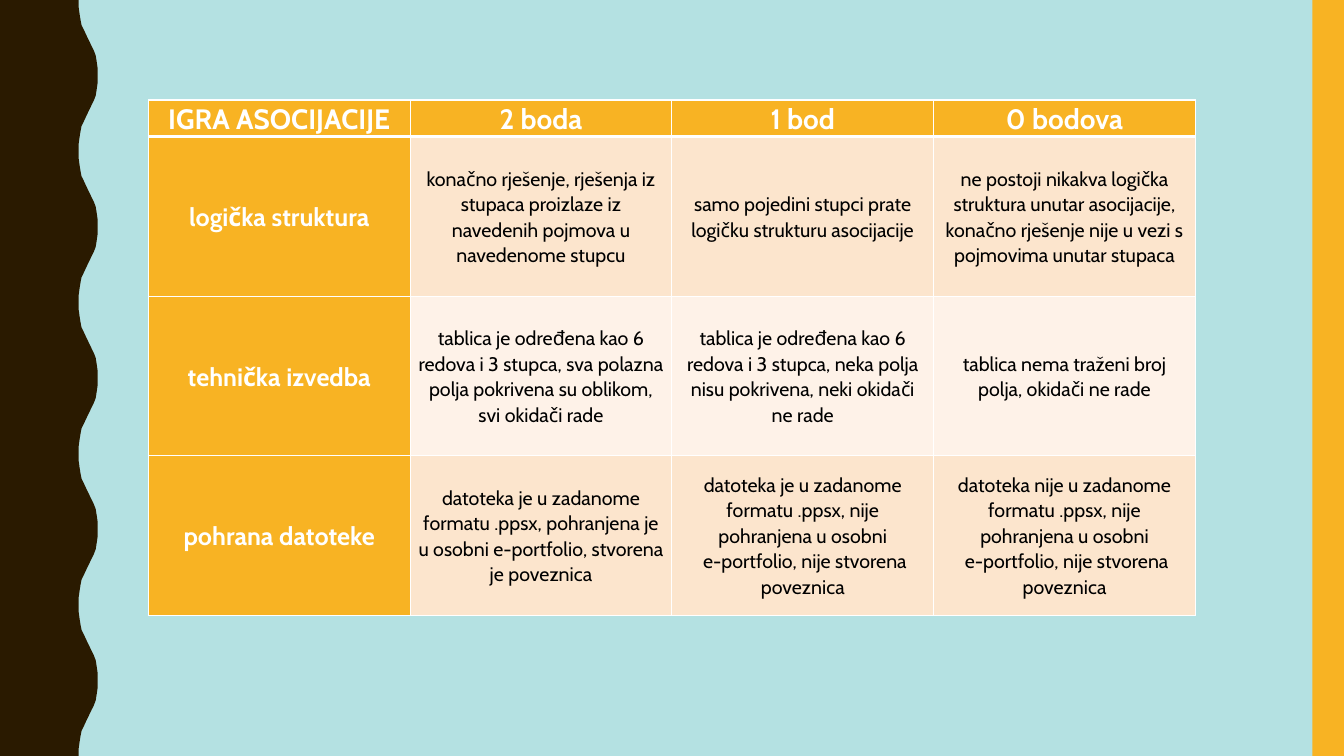
from lxml.etree import SubElement
from pptx import Presentation
from pptx.dml.color import RGBColor
from pptx.enum.shapes import MSO_SHAPE as Shape
from pptx.enum.text import MSO_ANCHOR as Anchor, PP_ALIGN as Align
from pptx.oxml import parse_xml
from pptx.oxml.ns import nsdecls, qn
from pptx.util import Pt

WIDTH, HEIGHT = 960, 540
AQUA, BROWN, GOLD = "B4E1E2", "2A1A00", "F8B323"
PEACH, CREAM, WHITE, BLACK = "FCE5CD", "FEF2E8", "FFFFFF", "000000"

# Half a wave, from trough to crest, in points
WAVE_PERIOD = 108
HALF_WAVE = [
    (56.2, 0), (56.2, 5), (56.9, 10), (57.6, 14.4), (58.3, 18),
    (59.8, 21), (61.2, 24), (62.6, 27), (64.1, 30), (65.5, 33),
    (67, 36), (68.4, 39.6), (69.1, 44), (69.8, 49), (69.8, 54),
]

HEADINGS = ["IGRA ASOCIJACIJE", "2 boda", "1 bod", "0 bodova"]
CRITERIA = [
    ["logička struktura",
     "konačno rješenje, rješenja iz stupaca proizlaze iz navedenih pojmova u navedenome stupcu",
     "samo pojedini stupci prate logičku strukturu asocijacije",
     "ne postoji nikakva logička struktura unutar asocijacije, "
     "konačno rješenje nije u vezi s pojmovima unutar stupaca"],
    ["tehnička izvedba",
     "tablica je određena kao 6 redova i 3 stupca, sva polazna polja pokrivena su oblikom, "
     "svi okidači rade",
     "tablica je određena kao 6 redova i 3 stupca, neka polja nisu pokrivena, "
     "neki okidači ne rade",
     "tablica nema traženi broj polja, okidači ne rade"],
    ["pohrana datoteke",
     "datoteka je u zadanome formatu .ppsx, pohranjena je u osobni e-portfolio, "
     "stvorena je poveznica",
     "datoteka je u zadanome formatu .ppsx, nije pohranjena u osobni\n"
     " e-portfolio, nije stvorena poveznica",
     "datoteka nije u zadanome formatu .ppsx, nije pohranjena u osobni\n"
     " e-portfolio, nije stvorena poveznica"],
]


def paint(fill, color):
    fill.solid()
    fill.fore_color.rgb = RGBColor.from_string(color)


def finish(shape, color):
    paint(shape.fill, color)
    shape.line.fill.background()
    shape.shadow.inherit = False


def write(frame, text, size=14, color=BLACK, bold=False):
    frame.text = text
    for paragraph in frame.paragraphs:
        paragraph.alignment = Align.CENTER
        paragraph.line_spacing = 1.07
        font = paragraph.font
        for run in paragraph.runs:
            font = run.font
            font.name, font.size, font.bold = "Cabin", Pt(size), bold
            font.color.rgb = RGBColor.from_string(color)


def set_borders(cell, top=1, bottom=1):
    properties = cell._tc.get_or_add_tcPr()
    widths = {"lnL": 1, "lnR": 1, "lnT": top, "lnB": bottom}
    for position, (side, width) in enumerate(widths.items()):
        border = parse_xml(f'<a:{side} {nsdecls("a")} w="{Pt(width)}"/>')
        fill = SubElement(border, qn("a:solidFill"))
        SubElement(fill, qn("a:srgbClr"), val=WHITE)
        properties.insert(position, border)


def fill_cell(cell, text, fill, top=1, bottom=1, **text_format):
    cell.vertical_anchor = Anchor.MIDDLE
    cell.margin_left = cell.margin_right = Pt(5)
    cell.margin_top = cell.margin_bottom = 0
    paint(cell.fill, fill)
    set_borders(cell, top, bottom)
    write(cell.text_frame, text, **text_format)


def add_wavy_edge(slide):
    wave = HALF_WAVE + [(x, WAVE_PERIOD - y) for x, y in HALF_WAVE[-2::-1]]
    edge = [(Pt(x), Pt(y + start))
            for start in range(0, HEIGHT, WAVE_PERIOD) for x, y in wave]
    builder = slide.shapes.build_freeform(0, 0)
    builder.add_line_segments(edge + [(0, Pt(HEIGHT))], close=True)
    finish(builder.convert_to_shape(), BROWN)


def add_side_bar(slide, left):
    bar = slide.shapes.add_shape(
        Shape.RECTANGLE, Pt(left), 0, Pt(WIDTH - left), Pt(HEIGHT))
    finish(bar, GOLD)


def add_rubric(slide, left, top, column_width, header_height, row_height):
    rows, columns = len(CRITERIA) + 1, len(HEADINGS)
    rubric = slide.shapes.add_table(
        rows, columns, Pt(left), Pt(top), Pt(column_width * columns),
        Pt(header_height + row_height * len(CRITERIA))).table
    for column in rubric.columns:
        column.width = Pt(column_width)
    for index, row in enumerate(rubric.rows):
        row.height = Pt(row_height if index else header_height)

    # Header row
    for index, heading in enumerate(HEADINGS):
        fill_cell(rubric.cell(0, index), heading, GOLD, bottom=3,
                  size=20, color=WHITE, bold=True)

    # Criterion names and their descriptions, in banded rows
    for index, (criterion, *descriptions) in enumerate(CRITERIA, 1):
        top_border = 3 if index == 1 else 1
        fill_cell(rubric.cell(index, 0), criterion, GOLD, top=top_border,
                  size=18, color=WHITE, bold=True)
        band = PEACH if index % 2 else CREAM
        for column, description in enumerate(descriptions, 1):
            fill_cell(rubric.cell(index, column), description, band, top=top_border)


def main():
    deck = Presentation()
    deck.slide_width, deck.slide_height = Pt(WIDTH), Pt(HEIGHT)
    slide = deck.slides.add_slide(deck.slide_layouts[6])
    paint(slide.background.fill, AQUA)
    add_wavy_edge(slide)
    add_side_bar(slide, 937.5)
    add_rubric(slide, left=106, top=71.5, column_width=187,
               header_height=21, row_height=114)
    deck.save("out.pptx")


if __name__ == "__main__":
    main()
